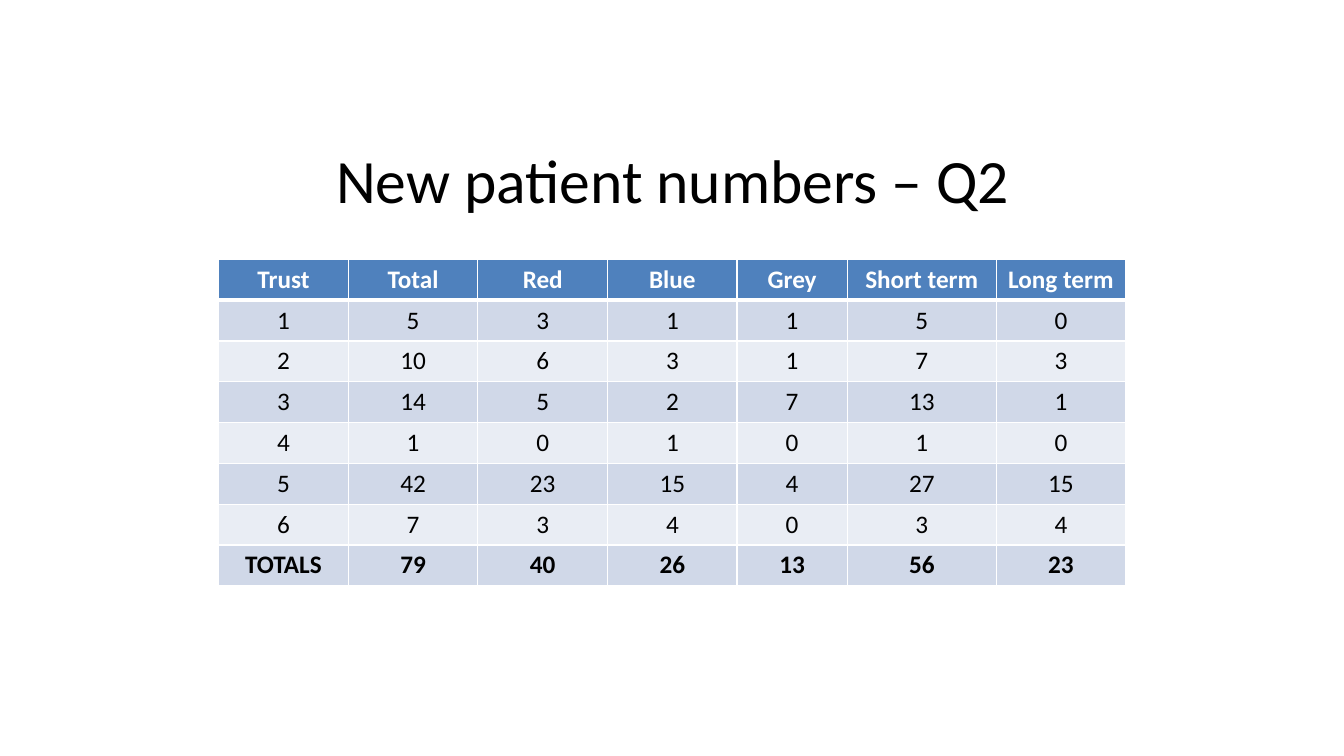
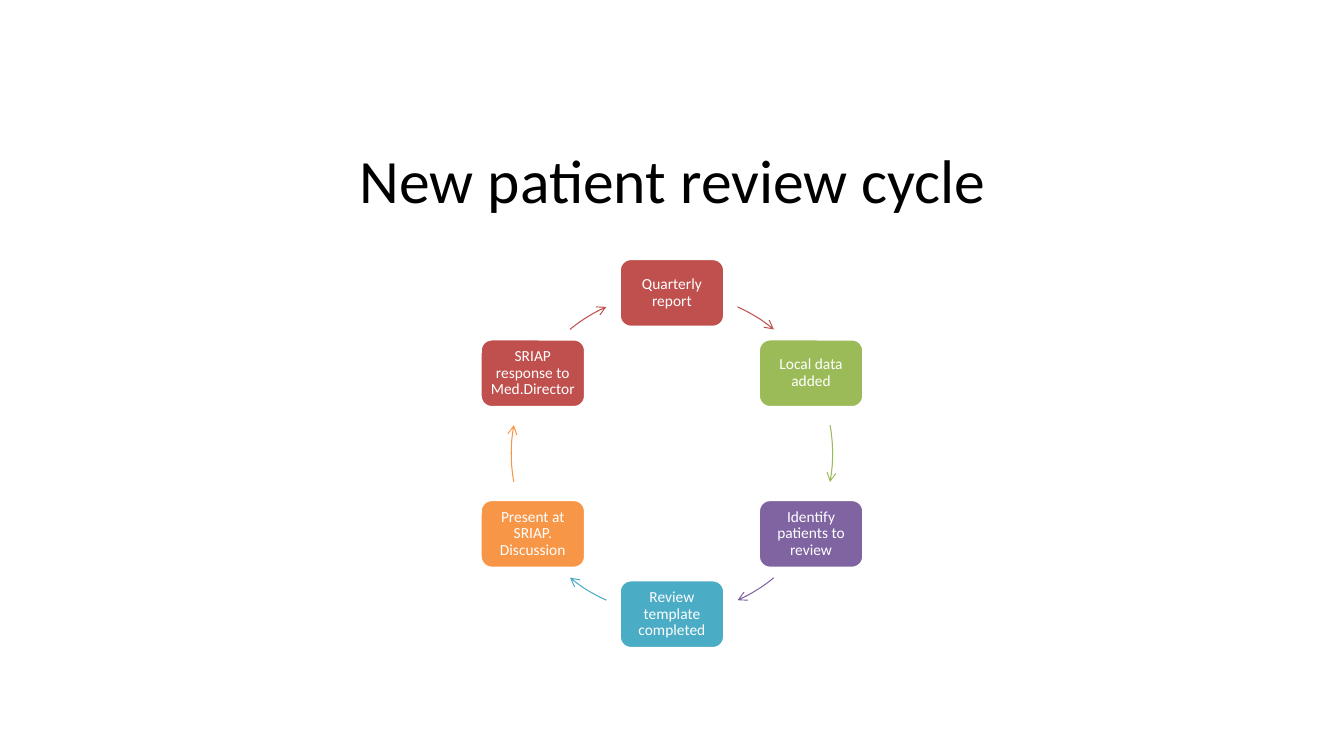
from dataclasses import dataclass
from math import cos, radians, sin

from lxml import etree
from pptx import Presentation
from pptx.dml.color import RGBColor
from pptx.enum import shapes, text
from pptx.oxml import ns
from pptx.slide import Slide
from pptx.util import Emu, Pt

SCALE = 9525  # EMU per px, 96 px to the inch
FONT = "Calibri"
HUES = {
    "white": "FFFFFF", "black": "000000", "head": "4F81BD",
    "odd": "D0D8E8", "even": "E9EDF4",
    "red": "C0504D", "green": "9BBB59", "purple": "8064A2",
    "teal": "4BACC6", "orange": "F79646",
}


@dataclass(frozen=True)
class Step:
    label: str
    hue: str


# Table content
HEADS = ["Trust", "Total", "Red", "Blue", "Grey", "Short term", "Long term"]
COUNTS = [
    (1, 5, 3, 1, 1, 5, 0),
    (2, 10, 6, 3, 1, 7, 3),
    (3, 14, 5, 2, 7, 13, 1),
    (4, 1, 0, 1, 0, 1, 0),
    (5, 42, 23, 15, 4, 27, 15),
    (6, 7, 3, 4, 0, 3, 4),
    ("TOTALS", 79, 40, 26, 13, 56, 23),
]
WIDTHS = [124, 123, 124, 123, 105, 142, 123]
DEPTH = 311

# Cycle content, clockwise from the top
STEPS = [
    Step("Quarterly report", "red"),
    Step("Local data added", "green"),
    Step("Identify patients to review", "purple"),
    Step("Review template completed", "teal"),
    Step("Present at SRIAP. Discussion", "orange"),
    Step("SRIAP response to Med.Director", "red"),
]
MID_X, MID_Y, RADIUS = 640, 432, 153
BOX_W, BOX_H = 100, 65
ARCS = [(24.1, 39.4), (79.8, 100.2), (140.6, 155.9)]  # degrees, each half turn


def px(size: float) -> Emu:
    return Emu(round(size * SCALE))


def rgb(hue: str) -> RGBColor:
    return RGBColor.from_string(HUES[hue])


def style(para, size: int, hue: str, bold: bool = False) -> None:
    para.alignment = text.PP_ALIGN.CENTER
    font = para.font
    font.name, font.size, font.bold = FONT, Pt(size), bold
    font.color.rgb = rgb(hue)


def spot(angle: float) -> tuple[float, float]:
    """Point on the cycle, with the angle taken clockwise from the top."""
    turn = radians(angle)
    return MID_X + RADIUS * sin(turn), MID_Y - RADIUS * cos(turn)


def add_page(deck, title: str) -> Slide:
    page = deck.slides.add_slide(deck.slide_layouts[6])
    box = page.shapes.add_textbox(px(65), px(110), px(1152), px(120))
    frame = box.text_frame
    frame.word_wrap = True
    frame.vertical_anchor = text.MSO_ANCHOR.MIDDLE
    frame.text = title
    style(frame.paragraphs[0], 44, "black")
    return page


def edge(cell, tag: str, width: int) -> None:
    props = cell._tc.get_or_add_tcPr()
    line = etree.SubElement(props, ns.qn(f"a:{tag}"), w=str(Pt(width)))
    fill = etree.SubElement(line, ns.qn("a:solidFill"))
    etree.SubElement(fill, ns.qn("a:srgbClr"), val=HUES["white"])


def add_grid(page: Slide) -> None:
    rows = [HEADS, *COUNTS]
    grid = page.shapes.add_table(
        len(rows), len(HEADS), px(208), px(247), px(sum(WIDTHS)), px(DEPTH)
    ).table
    grid.first_row = grid.horz_banding = False
    for col, width in zip(grid.columns, WIDTHS):
        col.width = px(width)
    for r, row in enumerate(rows):
        grid.rows[r].height = px(DEPTH / len(rows))
        top = r == 0
        fill = "head" if top else "odd" if r % 2 else "even"
        for c, value in enumerate(row):
            cell = grid.cell(r, c)
            cell.text = str(value)
            style(cell.text_frame.paragraphs[0], 18,
                  "white" if top else "black", top or r == len(rows) - 1)
            # Borders come before the fill in the cell properties
            for tag in ("lnL", "lnR"):
                edge(cell, tag, 1)
            edge(cell, "lnT", 3 if r == 1 else 1)
            edge(cell, "lnB", 3 if top else 1)
            cell.fill.solid()
            cell.fill.fore_color.rgb = rgb(fill)


def add_step(page: Slide, step: Step, angle: float) -> None:
    x, y = spot(angle)
    box = page.shapes.add_shape(
        shapes.MSO_SHAPE.ROUNDED_RECTANGLE,
        px(x - BOX_W / 2), px(y - BOX_H / 2), px(BOX_W), px(BOX_H))
    box.shadow.inherit = False
    box.fill.solid()
    box.fill.fore_color.rgb = rgb(step.hue)
    box.line.color.rgb = rgb("white")
    box.line.width = Pt(2)
    frame = box.text_frame
    frame.word_wrap = True
    frame.vertical_anchor = text.MSO_ANCHOR.MIDDLE
    frame.margin_left = frame.margin_right = px(5)
    frame.margin_top = frame.margin_bottom = px(5)
    frame.text = step.label
    para = frame.paragraphs[0]
    para.line_spacing = 0.9
    style(para, 11, "white")


def add_arc(page: Slide, hue: str, start: float, end: float) -> None:
    left, top, size = px(MID_X - RADIUS), px(MID_Y - RADIUS), px(2 * RADIUS)
    x, y = (px(n) for n in spot(start))
    draft = page.shapes.build_freeform(x, y)
    draft.add_line_segments([tuple(px(n) for n in spot(end))], close=False)
    arc = draft.convert_to_shape()

    # The frame is the whole circle; the path is one true arc of it
    arc.left, arc.top, arc.width, arc.height = left, top, size, size
    path = arc._element.find(f".//{ns.qn('a:path')}")
    path.set("w", str(size))
    path.set("h", str(size))
    for part in list(path):
        path.remove(part)
    move = etree.SubElement(path, ns.qn("a:moveTo"))
    etree.SubElement(move, ns.qn("a:pt"), x=str(x - left), y=str(y - top))
    etree.SubElement(
        path, ns.qn("a:arcTo"), wR=str(px(RADIUS)), hR=str(px(RADIUS)),
        stAng=str(round((start - 90) % 360 * 60000)),
        swAng=str(round((end - start) * 60000)))

    arc.shadow.inherit = False
    arc.fill.background()
    arc.line.color.rgb = rgb(hue)
    arc.line.width = Pt(0.75)
    etree.SubElement(arc.line._get_or_add_ln(), ns.qn("a:tailEnd"), type="arrow")


def add_cycle(page: Slide) -> None:
    for i, step in enumerate(STEPS):
        add_step(page, step, 360 / len(STEPS) * i)
        half, part = divmod(i, len(ARCS))
        start, end = ARCS[part]
        add_arc(page, step.hue, start + 180 * half, end + 180 * half)


def main() -> None:
    deck = Presentation()
    deck.slide_width, deck.slide_height = px(1280), px(720)
    add_grid(add_page(deck, "New patient numbers – Q2"))
    add_cycle(add_page(deck, "New patient review cycle"))
    deck.save("out.pptx")


if __name__ == "__main__":
    main()
